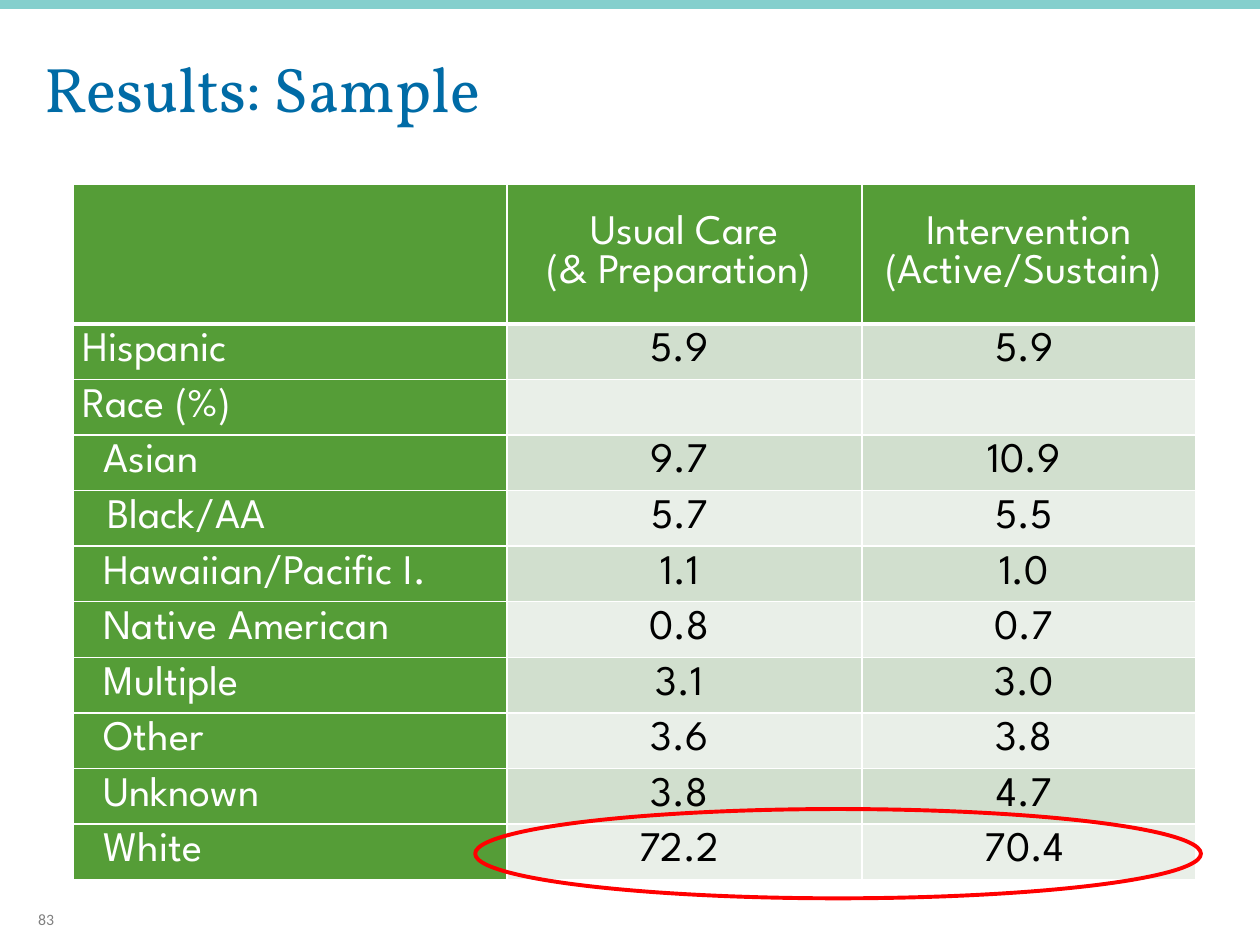
"""Build the sample results slide with its race and ethnicity table."""
from lxml import etree
from pptx import Presentation
from pptx.dml.color import RGBColor
from pptx.enum import shapes, text
from pptx.oxml.ns import qn
from pptx.util import Cm, Pt

TITLE = "Results: Sample"
PAGE = "83"
HEADS = ["", "Usual Care\n(& Preparation) ", "Intervention\n(Active/Sustain) "]
ROWS = [
    ("Hispanic", 0.18, "5.9", "5.9"),
    ("Race (%)", 0.18, "", ""),
    ("Asian", 0.61, "9.7", "10.9"),
    ("Black/AA", 0.68, "5.7", "5.5"),
    ("Hawaiian/Pacific I.", 0.61, "1.1", "1.0"),
    ("Native American", 0.61, "0.8", "0.7"),
    ("Multiple", 0.61, "3.1", "3.0"),
    ("Other", 0.61, "3.6", "3.8"),
    ("Unknown", 0.61, "3.8", "4.7"),
    ("White", 0.61, "72.2", "70.4"),
]
WIDTHS = [8.74, 7.16, 6.73]
HEAD_H, ROW_H = 2.82, 1.12
THEME = {
    "bar": "85CFCD", "title": "006BA6", "page": "808080", "green": "559D37",
    "bands": ["D1DFCE", "E9EFE8"], "white": "FFFFFF", "ink": "000000", "ring": "FF0000",
    "serif": "Vollkorn", "sans": "League Spartan", "plain": "Calibri",
    "big": 36, "body": 24, "small": 9,
}
LEFT, MID, RIGHT = text.PP_ALIGN.LEFT, text.PP_ALIGN.CENTER, text.PP_ALIGN.RIGHT


def color(key):
    return RGBColor.from_string(THEME.get(key, key))


def write(frame, words, font="sans", size="body", ink="ink", align=LEFT, lead=None):
    frame.word_wrap = True
    for i, line in enumerate(words.split("\n")):
        para = frame.add_paragraph() if i else frame.paragraphs[0]
        para.alignment = align
        if lead:
            para.line_spacing = lead
        run = para.add_run()
        run.text = line
        run.font.name, run.font.size = THEME[font], Pt(THEME[size])
        run.font.bold = False
        run.font.color.rgb = color(ink)


def border(cell, **widths):
    props = cell._tc.get_or_add_tcPr()
    for side in "LRTB":
        line = etree.SubElement(props, qn("a:ln" + side), w=str(Pt(widths.get(side, 1))))
        fill = etree.SubElement(line, qn("a:solidFill"))
        etree.SubElement(fill, qn("a:srgbClr"), val=THEME["white"])


def style(cell, words, fill, left=0, right=0, rules=None, **form):
    border(cell, **(rules or {}))
    cell.fill.solid()
    cell.fill.fore_color.rgb = color(fill)
    cell.margin_left, cell.margin_right = Cm(left), Cm(right)
    cell.margin_top = cell.margin_bottom = 0
    cell.vertical_anchor = text.MSO_ANCHOR.MIDDLE
    write(cell.text_frame, words, **form)


def grid(slide):
    height = HEAD_H + ROW_H * len(ROWS)
    table = slide.shapes.add_table(len(ROWS) + 1, len(WIDTHS), Cm(1.48), Cm(3.71),
                                   Cm(sum(WIDTHS)), Cm(height)).table
    for col, width in zip(table.columns, WIDTHS):
        col.width = Cm(width)
    for i, row in enumerate(table.rows):
        row.height = Cm(ROW_H if i else HEAD_H)
    for j, head in enumerate(HEADS):
        style(table.cell(0, j), head, "green", rules={"B": 3}, ink="white", align=MID)
    for i, (label, indent, *values) in enumerate(ROWS):
        rules = {} if i else {"T": 3}
        style(table.cell(i + 1, 0), label, "green", left=indent, rules=rules, ink="white")
        for j, value in enumerate(values, 1):
            style(table.cell(i + 1, j), value, THEME["bands"][i % 2], right=0.2,
                  rules=rules, align=MID)


def main():
    deck = Presentation()
    deck.slide_width, deck.slide_height = Cm(25.4), Cm(19.05)
    slide = deck.slides.add_slide(deck.slide_layouts[5])
    kinds = shapes.MSO_SHAPE

    bar = slide.shapes.add_shape(kinds.RECTANGLE, 0, 0, deck.slide_width, Cm(0.18))
    bar.shadow.inherit = False
    bar.fill.solid()
    bar.fill.fore_color.rgb = color("bar")
    bar.line.fill.background()

    title = slide.shapes.title
    title.left, title.top, title.width, title.height = Cm(0.64), Cm(0.43), Cm(21.49), Cm(2.21)
    title.text_frame.vertical_anchor = text.MSO_ANCHOR.BOTTOM
    write(title.text_frame, TITLE, font="serif", size="big", ink="title", lead=0.8)

    page = slide.shapes.add_textbox(Cm(0.3), Cm(18.31), Cm(1.04), Cm(0.46))
    page.text_frame.vertical_anchor = text.MSO_ANCHOR.MIDDLE
    write(page.text_frame, PAGE, font="plain", size="small", ink="page", align=RIGHT)

    grid(slide)

    ring = slide.shapes.add_shape(kinds.OVAL, Cm(9.58), Cm(16.31), Cm(14.63), Cm(1.8))
    ring.shadow.inherit = False
    ring.fill.background()
    ring.line.color.rgb = color("ring")
    ring.line.width = Pt(2.25)

    deck.save("out.pptx")


if __name__ == "__main__":
    main()
